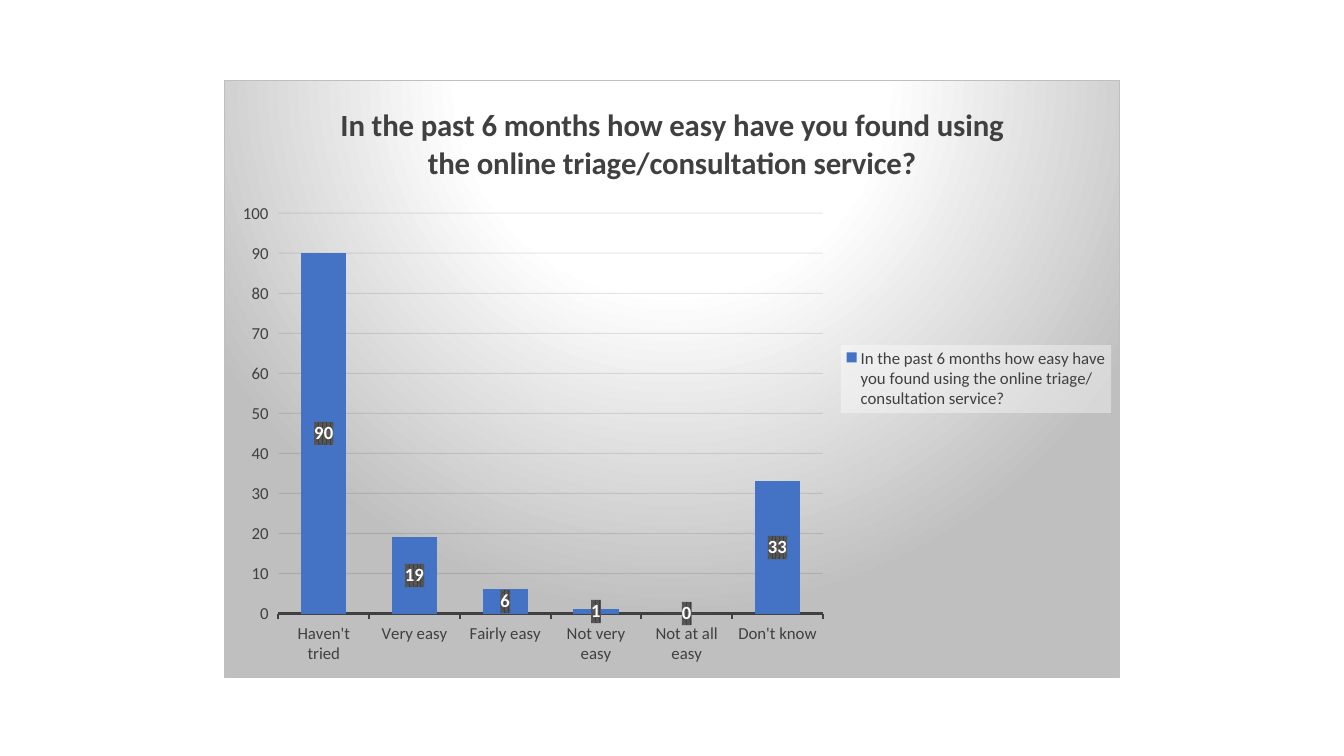
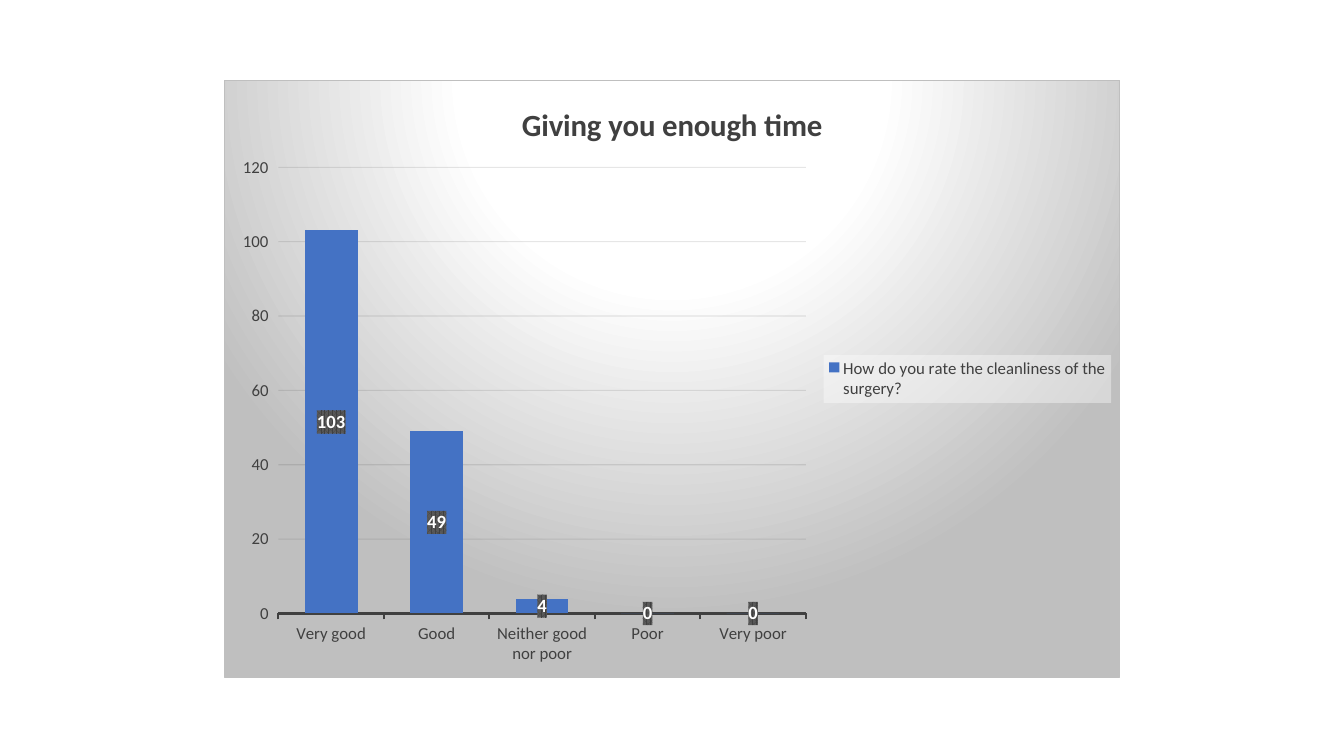
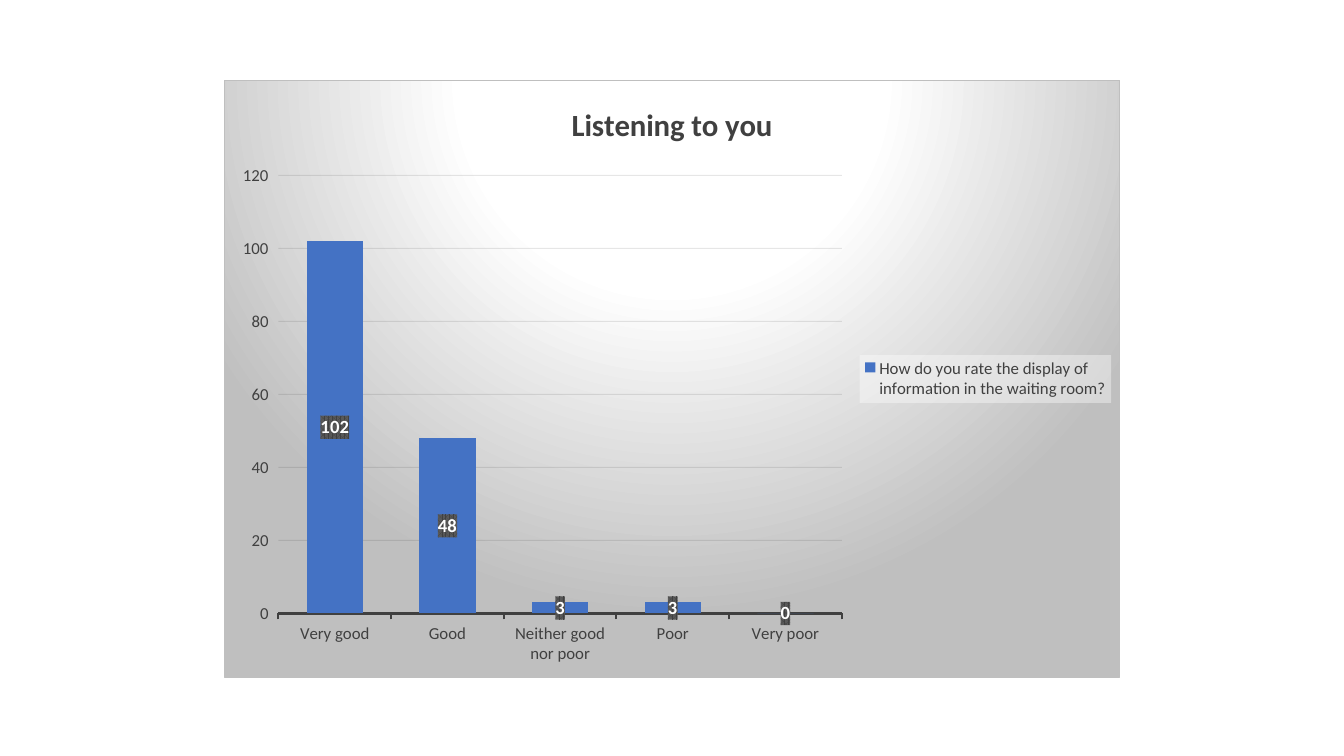
from pptx import Presentation
from pptx import util as u
from pptx.chart.data import CategoryChartData
from pptx.dml.color import RGBColor
from pptx.enum import chart as charts
from pptx.oxml import ns, parse_xml

# Scale, colours and shared geometry
PX = 914400 / 100.8
SLIDE_SIZE = (1344, 756)
CHART_BOX = (224, 80, 896, 598)
PLOT_LEFT, PLOT_BOTTOM = 278, 614

WHITE = RGBColor(0xFF, 0xFF, 0xFF)
BLACK = RGBColor(0x00, 0x00, 0x00)
DARK = RGBColor(0x40, 0x40, 0x40)
BAR_BLUE = RGBColor(0x44, 0x72, 0xC4)
GRID = RGBColor(0x0D, 0x0D, 0x0D)
SILVER = RGBColor(0xBF, 0xBF, 0xBF)
STRIPE = RGBColor(0x59, 0x59, 0x59)

# Text formats
BASE = {"name": "Calibri", "size": u.Pt(10), "color": BLACK}
SMALL = {**BASE, "size": u.Pt(12), "color": DARK}
TITLE = {**BASE, "size": u.Pt(22), "bold": True, "color": DARK}
LABEL = {**BASE, "size": u.Pt(13.3), "bold": True, "color": WHITE}

# Fills that need XML
PANEL_FILL = f"""<a:gradFill><a:gsLst>
  <a:gs pos="0"><a:srgbClr val="{WHITE}"/></a:gs>
  <a:gs pos="39000"><a:srgbClr val="{WHITE}"/></a:gs>
  <a:gs pos="100000"><a:srgbClr val="{SILVER}"/></a:gs></a:gsLst>
  <a:path path="circle">
    <a:fillToRect l="50000" t="-80000" r="50000" b="180000"/></a:path>
</a:gradFill>
<a:ln w="9525"><a:solidFill><a:srgbClr val="{SILVER}"/></a:solidFill></a:ln>"""
LEGEND_FILL = f"""<a:solidFill><a:srgbClr val="{WHITE}">
  <a:alpha val="39000"/></a:srgbClr></a:solidFill>"""
LABEL_FILL = f"""<a:pattFill prst="pct75">
  <a:fgClr><a:srgbClr val="{DARK}"/></a:fgClr>
  <a:bgClr><a:srgbClr val="{STRIPE}"/></a:bgClr></a:pattFill>"""

# Survey questions: title, series name, plot top and right in px, answers
RATINGS = ["Very good", "Good", "Neither good nor poor", "Poor", "Very poor"]
EASE = ["Haven't tried", "Very easy", "Fairly easy", "Not very easy",
        "Not at all easy", "Don't know"]
TRIAGE = ("In the past 6 months how easy have you found using "
          "the online triage/consultation service?")
QUESTIONS = [
    (TRIAGE, TRIAGE, 213, 823, EASE, [90, 19, 6, 1, 0, 33]),
    ("Giving you enough time",
     "How do you rate the cleanliness of the surgery?",
     167, 806, RATINGS, [103, 49, 4, 0, 0]),
    ("Listening to you",
     "How do you rate the display of information in the waiting room?",
     175, 842, RATINGS, [102, 48, 3, 3, 0]),
]


def px(length):
    return u.Emu(round(length * PX))


def set_font(font, style):
    for name, value in style.items():
        if name == "color":
            font.color.rgb = value
        else:
            setattr(font, name, value)


class SurveyDeck:
    """Holds the presentation, its current slide and current chart."""

    def __init__(self):
        self.presentation = Presentation()
        self.presentation.slide_width, self.presentation.slide_height = map(
            px, SLIDE_SIZE)

    def add_slide(self):
        layout = self.presentation.slide_layouts[6]
        self.slide = self.presentation.slides.add_slide(layout)

    def add_column_chart(self, name, categories, values):
        data = CategoryChartData()
        data.categories = categories
        data.add_series(name, values)
        self.chart = self.slide.shapes.add_chart(
            charts.XL_CHART_TYPE.COLUMN_CLUSTERED,
            *map(px, CHART_BOX), data).chart
        set_font(self.chart.font, BASE)
        self.fill_behind_text("c:txPr", PANEL_FILL)

    def fill_behind_text(self, text_path, fill):
        """Puts shape properties just before the text properties found."""
        text = self.chart.element.xpath(text_path)[0]
        text.addprevious(parse_xml(
            f'<c:spPr {ns.nsdecls("c", "a")}>{fill}</c:spPr>'))

    def add_title(self, title):
        self.chart.has_title = True
        frame = self.chart.chart_title.text_frame
        frame.text = title
        set_font(frame.paragraphs[0].runs[0].font, TITLE)

    def place_plot(self, top, right):
        left, chart_top, width, height = CHART_BOX
        fractions = {"x": (PLOT_LEFT - left) / width,
                     "y": (top - chart_top) / height,
                     "w": (right - PLOT_LEFT) / width,
                     "h": (PLOT_BOTTOM - top) / height}
        parts = "".join(f'<c:{key} val="{value:.4f}"/>'
                        for key, value in fractions.items())
        plot_area = self.chart.element.xpath("c:chart/c:plotArea")[0]
        for layout in plot_area.xpath("c:layout"):
            plot_area.remove(layout)
        plot_area.insert(0, parse_xml(
            f'<c:layout {ns.nsdecls("c")}><c:manualLayout>'
            '<c:layoutTarget val="inner"/><c:xMode val="edge"/>'
            f'<c:yMode val="edge"/>{parts}</c:manualLayout></c:layout>'))

    def style_axes(self):
        category, value = self.chart.category_axis, self.chart.value_axis
        for axis in (category, value):
            set_font(axis.tick_labels.font, SMALL)
            axis.major_tick_mark = charts.XL_TICK_MARK.OUTSIDE
            axis.minor_tick_mark = charts.XL_TICK_MARK.NONE
        category.format.line.color.rgb = DARK
        category.format.line.width = u.Pt(1.5)
        value.format.line.fill.background()
        value.has_major_gridlines = True
        grid_line = value.major_gridlines.format.line
        grid_line.color.rgb = GRID
        grid_line.width = u.Pt(0.75)
        color = self.chart.element.xpath(".//c:majorGridlines//a:srgbClr")[0]
        color.append(parse_xml(
            f'<a:alpha {ns.nsdecls("a")} val="10000"/>'))

    def style_columns(self):
        plot = self.chart.plots[0]
        plot.gap_width = 100
        plot.vary_by_categories = False
        series = plot.series[0]
        series.format.fill.solid()
        series.format.fill.fore_color.rgb = BAR_BLUE
        labels = series.data_labels
        labels.show_value = True
        labels.position = charts.XL_LABEL_POSITION.CENTER
        set_font(labels.font, LABEL)
        self.fill_behind_text(".//c:ser/c:dLbls/c:txPr", LABEL_FILL)

    def add_legend(self):
        self.chart.has_legend = True
        legend = self.chart.legend
        legend.position = charts.XL_LEGEND_POSITION.RIGHT
        legend.include_in_layout = False
        set_font(legend.font, SMALL)
        self.fill_behind_text(".//c:legend/c:txPr", LEGEND_FILL)


def main():
    deck = SurveyDeck()
    for title, name, top, right, categories, values in QUESTIONS:
        deck.add_slide()
        deck.add_column_chart(name, categories, values)
        deck.add_title(title)
        deck.place_plot(top, right)
        deck.style_axes()
        deck.style_columns()
        deck.add_legend()
    deck.presentation.save("out.pptx")


if __name__ == "__main__":
    main()
